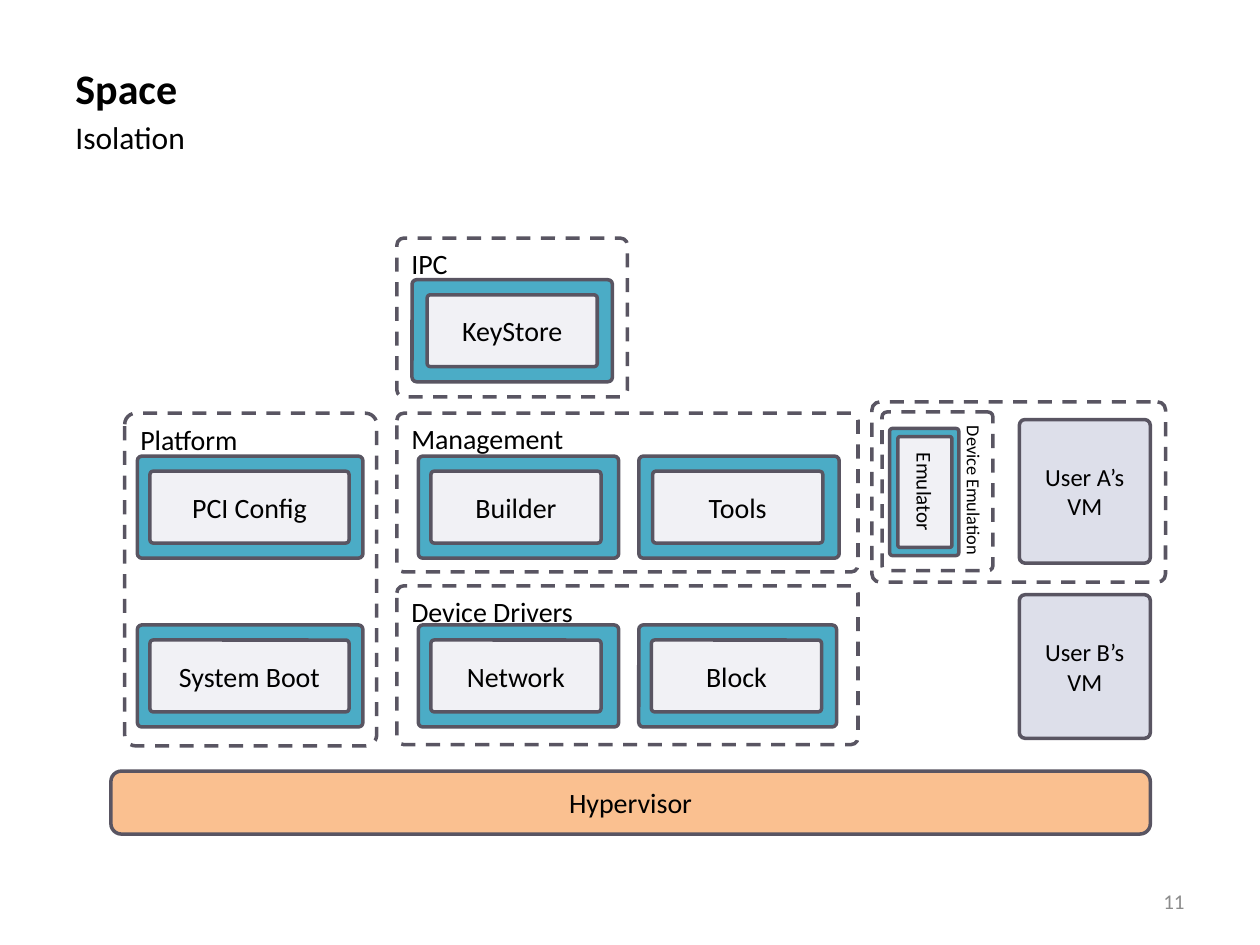
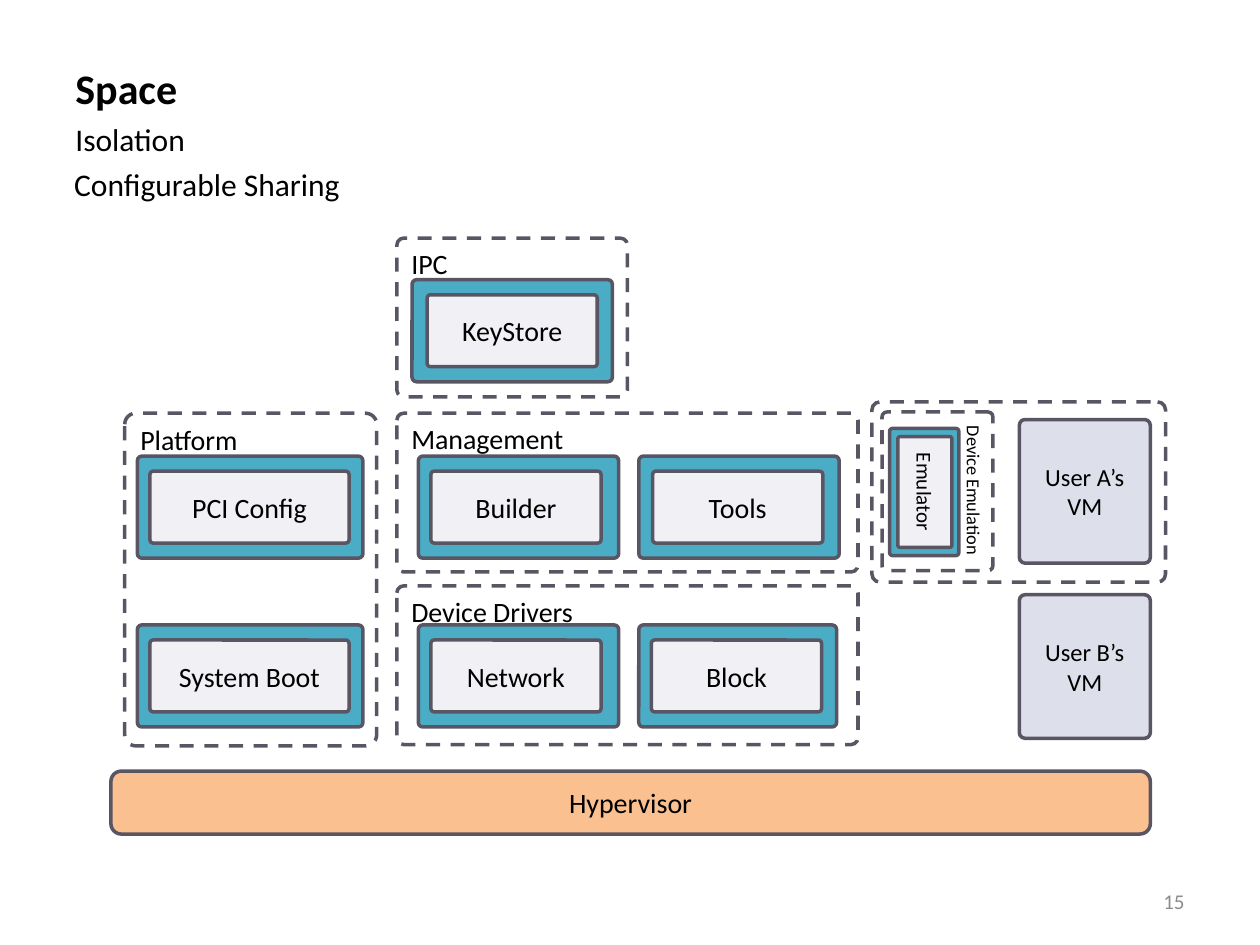
import pptx
import pptx.dml.color
import pptx.enum.dml
import pptx.enum.shapes
import pptx.enum.text
import pptx.util

Inches, Pt = pptx.util.Inches, pptx.util.Pt
RGBColor = pptx.dml.color.RGBColor
ALIGN = pptx.enum.text.PP_ALIGN
ANCHOR = pptx.enum.text.MSO_ANCHOR

COLORS = {
    "text": "000000", "page_number": "8C8C8C", "outline": "595562",
    "hypervisor": "FAC090", "vm": "DDDFEA", "frame": "4BACC6", "core": "F1F1F5",
}
CORNER = 0.044

# Dashed groups: label, (left, top, width, height), text size, rotation
GROUPS = [
    ("Platform", (0.99, 3.28, 2, 2.64), 16, 0),
    ("Device Drivers", (3.15, 4.65, 3.66, 1.26), 16, 0),
    ("Management", (3.15, 3.28, 3.66, 1.26), 16, 0),
    ("IPC", (3.15, 1.89, 1.83, 1.26), 16, 0),
    ("Device Emulation", (6.81, 3.46, 1.26, 0.88), 10.5, 90),
    ("", (7.37, 2.74, 1.43, 2.33), 16, 90),
]
# Modules: label, frame left, frame top, frame width, core left, core width
MODULES = [
    ("System Boot", 1.09, 4.96, 1.79, 1.19, 1.58),
    ("PCI Config", 1.09, 3.62, 1.79, 1.19, 1.58),
    ("Network", 3.32, 4.96, 1.59, 3.42, 1.35),
    ("Block", 5.07, 4.96, 1.57, 5.17, 1.35),
    ("Builder", 3.32, 3.62, 1.59, 3.42, 1.35),
    ("Tools", 5.07, 3.62, 1.59, 5.18, 1.35),
    ("KeyStore", 3.27, 2.22, 1.59, 3.39, 1.35),
]
FRAME_HEIGHT, CORE_HEIGHT = 0.81, 0.57
CORE_DROP = (FRAME_HEIGHT - CORE_HEIGHT) / 2

TITLE = ("Space", 24, True)
ISOLATION = ("Isolation", 18, False)
SHARING = ("Configurable Sharing", 18, False)
# Slides: page number, heading boxes as (left, top, lines)
SLIDES = [
    ("11", [(0.5, 0.45, [TITLE]), (0.5, 0.89, [ISOLATION])]),
    ("15", [(0.5, 0.45, [TITLE, ISOLATION]), (0.49, 1.26, [SHARING])]),
]


def write(shape, lines, color="text", align=ALIGN.LEFT, anchor=ANCHOR.TOP):
    """Fill a shape with (text, size, bold) lines, one paragraph each."""
    frame = shape.text_frame
    frame.word_wrap = True
    frame.vertical_anchor = anchor
    for index, (text, size, bold) in enumerate(lines):
        paragraph = frame.add_paragraph() if index else frame.paragraphs[0]
        paragraph.alignment = align
        paragraph.space_before = Pt(3.6 if index else 0)
        run = paragraph.add_run()
        run.text = text
        for attribute, value in {"name": "Calibri", "size": Pt(size), "bold": bold}.items():
            setattr(run.font, attribute, value)
        run.font.color.rgb = RGBColor.from_string(COLORS[color])


def add_box(slide, box, fill=None, label="", size=16, rotation=0, corner=CORNER):
    """Add a rounded box; without a fill it is a dashed group, labelled top left."""
    shape = slide.shapes.add_shape(
        pptx.enum.shapes.MSO_SHAPE.ROUNDED_RECTANGLE, *map(Inches, box))
    shape.adjustments[0] = corner
    shape.rotation = rotation
    shape.shadow.inherit = False
    shape.line.color.rgb = RGBColor.from_string(COLORS["outline"])
    shape.line.width = Pt(2)
    if fill:
        shape.fill.solid()
        shape.fill.fore_color.rgb = RGBColor.from_string(COLORS[fill])
    else:
        shape.fill.background()
        shape.line.dash_style = pptx.enum.dml.MSO_LINE.DASH
    if label:
        placing = {"align": ALIGN.CENTER, "anchor": ANCHOR.MIDDLE} if fill else {}
        write(shape, [(label, size, False)], **placing)


deck = pptx.Presentation()
deck.slide_width, deck.slide_height = Inches(10), Inches(7.5)

for page, headings in SLIDES:
    slide = deck.slides.add_slide(deck.slide_layouts[6])

    page_number = slide.shapes.add_textbox(*map(Inches, (7.17, 6.95, 2.33, 0.4)))
    write(page_number, [(page, 12, False)], "page_number", ALIGN.RIGHT, ANCHOR.MIDDLE)

    add_box(slide, (0.88, 6.12, 8.25, 0.5), "hypervisor", "Hypervisor", corner=0.167)
    for user, top in (("A", 3.33), ("B", 4.72)):
        add_box(slide, (8.09, top, 1.04, 1.14), "vm", f"User {user}’s VM", 14)

    for label, box, size, rotation in GROUPS:
        add_box(slide, box, None, label, size, rotation)

    for label, left, top, width, core_left, core_width in MODULES:
        add_box(slide, (left, top, width, FRAME_HEIGHT), "frame")
        add_box(slide, (core_left, top + CORE_DROP, core_width, CORE_HEIGHT), "core", label)
    add_box(slide, (6.83, 3.63, 1.01, 0.55), "frame", rotation=90)
    add_box(slide, (6.9, 3.69, 0.88, 0.43), "core", "Emulator", 12, 90)

    for left, top, lines in headings:
        heading = slide.shapes.add_textbox(*map(Inches, (left, top, 4.48, 1.63)))
        write(heading, lines)

deck.save("out.pptx")
